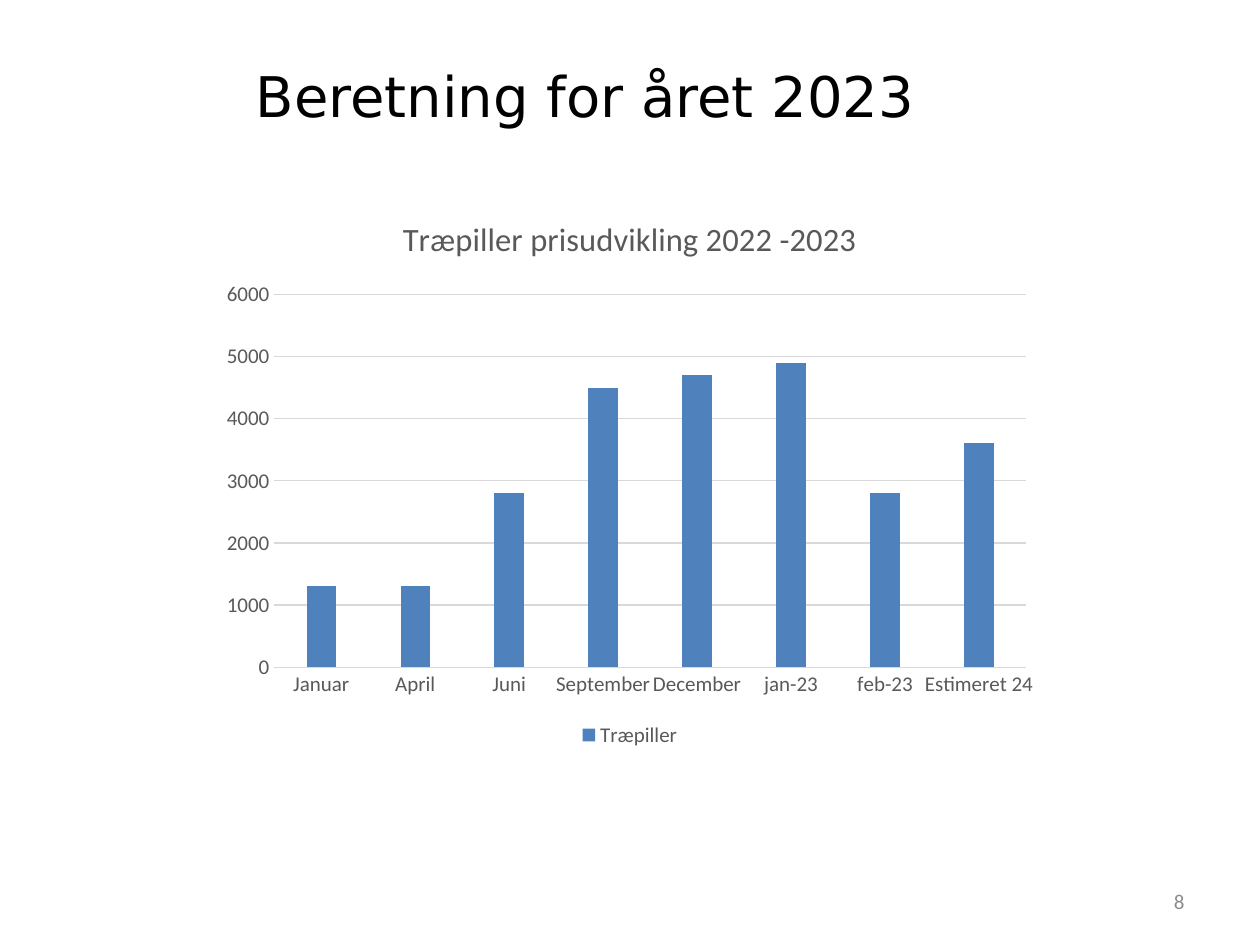
"""Build the slide with the yearly wood pellet price chart."""
from pptx import Presentation
from pptx.chart.data import CategoryChartData
from pptx.dml.color import RGBColor
from pptx.enum.chart import XL_CHART_TYPE as ChartType, XL_LEGEND_POSITION as LegendPosition
from pptx.enum.chart import XL_TICK_MARK as TickMark
from pptx.enum.text import MSO_ANCHOR as Anchor, PP_ALIGN as Align
from pptx.util import Pt


def style(font, size, color, name="Calibri"):
    font.size, font.name, font.bold = Pt(size), name, False
    font.color.rgb = RGBColor.from_string(color)


def add_text(text, left, top, width, height, size, color,
             name="Calibri", align=Align.LEFT, anchor=Anchor.TOP):
    box = slide.shapes.add_textbox(Pt(left), Pt(top), Pt(width), Pt(height))
    frame = box.text_frame
    frame.word_wrap, frame.vertical_anchor = True, anchor
    paragraph = frame.paragraphs[0]
    paragraph.alignment = align
    run = paragraph.add_run()
    run.text = text
    style(run.font, size, color, name)


GRAY, RULE = "595959", "D9D9D9"

deck = Presentation()
deck.slide_width, deck.slide_height = Pt(720), Pt(540)
slide = deck.slides.add_slide(deck.slide_layouts[6])

add_text("8", 516, 500.5, 168, 28.8, 12, "8C8C8C", align=Align.RIGHT, anchor=Anchor.MIDDLE)

pellet_prices = {
    "Januar": 1300, "April": 1300, "Juni": 2800, "September": 4500,
    "December": 4700, "jan-23": 4900, "feb-23": 2800, "Estimeret 24": 3600,
}
price_data = CategoryChartData()
price_data.categories = list(pellet_prices)
price_data.add_series("Træpiller", list(pellet_prices.values()))
chart = slide.shapes.add_chart(
    ChartType.COLUMN_CLUSTERED, Pt(120), Pt(110), Pt(480), Pt(320), price_data).chart
style(chart.font, 12, GRAY)

chart.has_title = True
heading = chart.chart_title.text_frame.paragraphs[0].add_run()
heading.text = "Træpiller prisudvikling 2022 -2023"
style(heading.font, 18.6, GRAY)
chart.chart_title.include_in_layout = False

chart.has_legend = True
chart.legend.position = LegendPosition.BOTTOM
chart.legend.include_in_layout = False
style(chart.legend.font, 12, GRAY)

months, prices = chart.category_axis, chart.value_axis
for axis in (months, prices):
    axis.major_tick_mark = axis.minor_tick_mark = TickMark.NONE
    style(axis.tick_labels.font, 12, GRAY)
prices.minimum_scale, prices.maximum_scale, prices.major_unit = 0, 6000, 1000
prices.format.line.fill.background()
for line in (months.format.line, prices.major_gridlines.format.line):
    line.width = Pt(0.75)
    line.color.rgb = RGBColor.from_string(RULE)

columns = chart.plots[0]
columns.gap_width, columns.overlap, columns.vary_by_categories = 219, -27, False
pellets = columns.series[0]
pellets.format.fill.solid()
pellets.format.fill.fore_color.rgb = RGBColor.from_string("4F81BD")

add_text("Beretning for året 2023", 139, 31.7, 471, 46, 32, "000000", name="DejaVu Sans")

deck.save("out.pptx")
